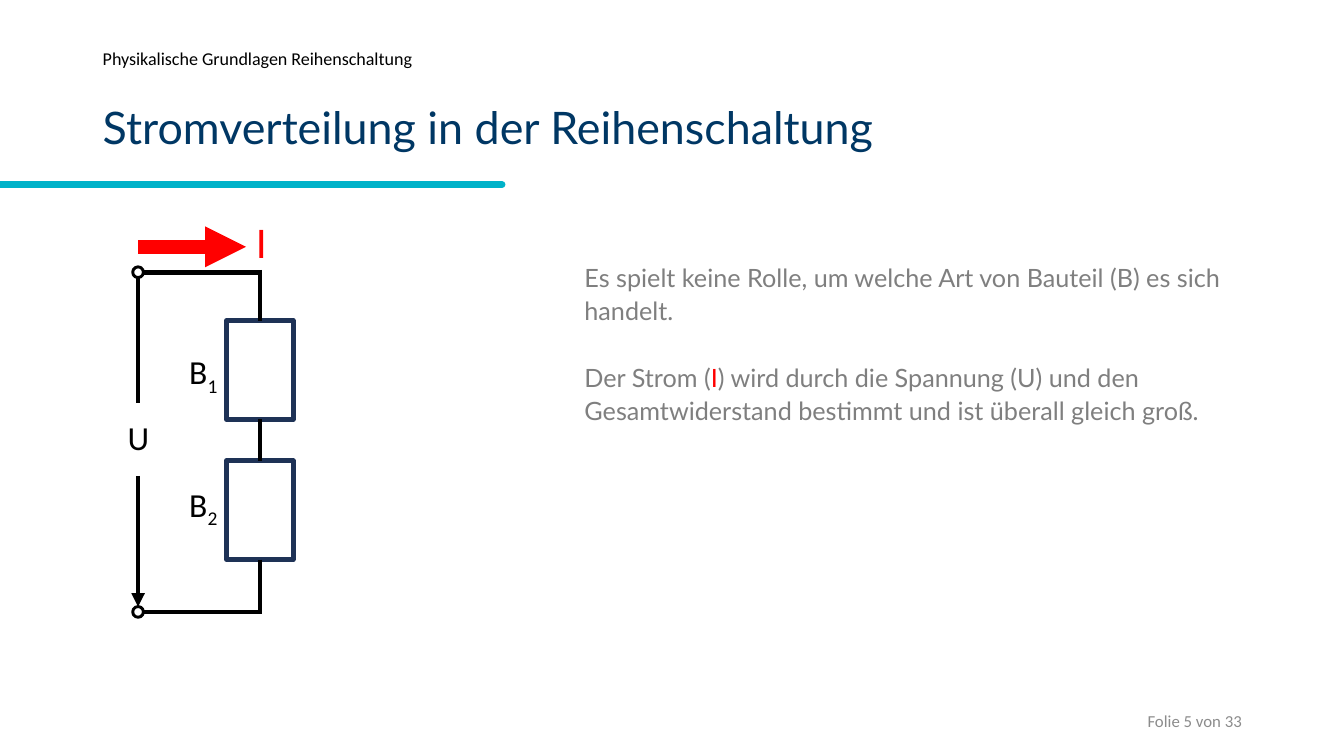
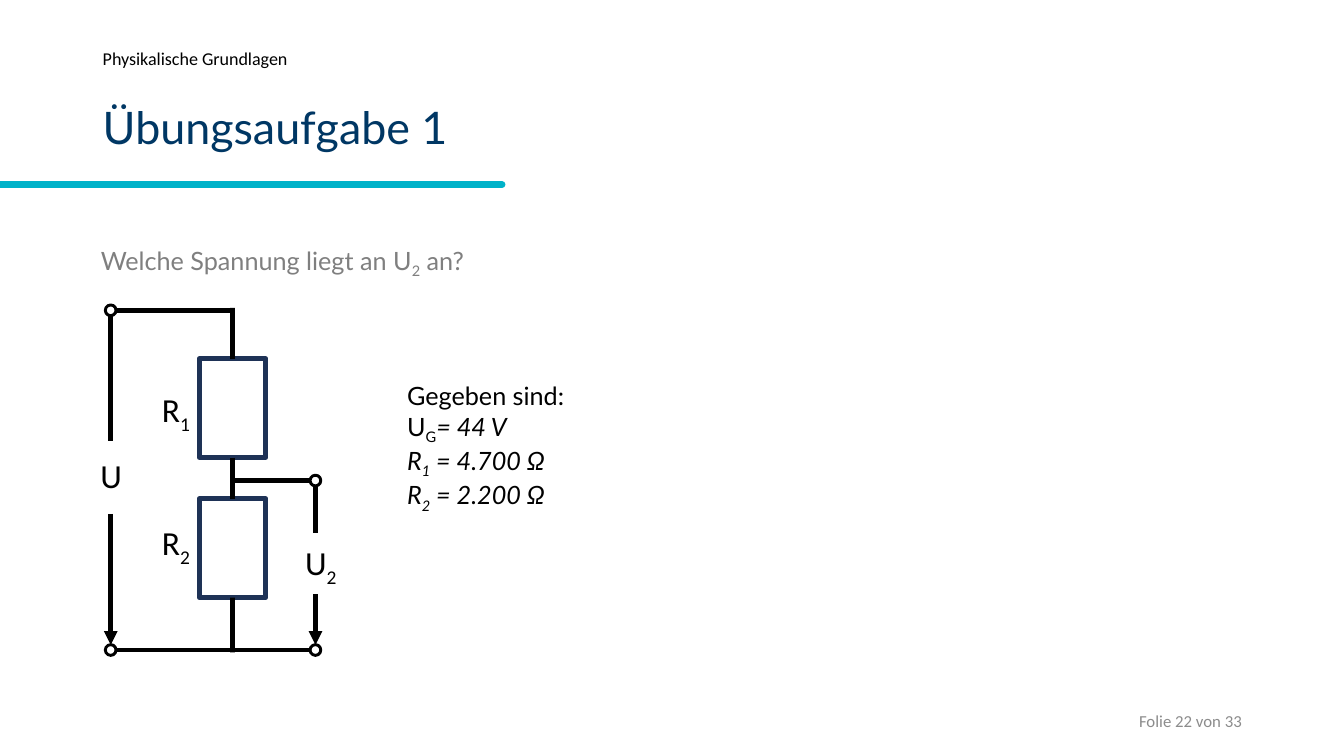
from lxml import etree
from pptx import Presentation
from pptx.dml.color import RGBColor
from pptx.enum.shapes import MSO_CONNECTOR, MSO_SHAPE
from pptx.enum.text import MSO_ANCHOR, PP_ALIGN
from pptx.oxml.ns import qn
from pptx.util import Cm, Pt

STRAIGHT = MSO_CONNECTOR.STRAIGHT
RECTANGLE, OVAL = MSO_SHAPE.RECTANGLE, MSO_SHAPE.OVAL
TOP, MIDDLE = MSO_ANCHOR.TOP, MSO_ANCHOR.MIDDLE
LEFT, RIGHT = PP_ALIGN.LEFT, PP_ALIGN.RIGHT
SIDE_TOP, SIDE_BOTTOM = 0, 2

COLORS = {
    "title": "003764",
    "band": "00B2C9",
    "body": "7F7F7F",
    "footer": "8C8C8C",
    "black": "000000",
    "white": "FFFFFF",
    "red": "FF0000",
    "component": "1E3256",
}
HEADING_FONT, LABEL_FONT = "Lato", "Calibri"
SLIDE_COUNT = 33

SLIDES = [
    {
        "topic": "Physikalische Grundlagen Reihenschaltung",
        "title": "Stromverteilung in der Reihenschaltung",
        "number": 5,
        "texts": [
            {
                "box": (14.48, 6.4, 16.59, 6),
                "color": "body",
                "line_spacing": 1.1,
                "space_before": 24,
                "paragraphs": [
                    [("Es spielt keine Rolle, um welche Art von Bauteil (B) es sich handelt.", "")],
                    [
                        ("Der Strom (", ""),
                        ("I", "red"),
                        (") wird durch die Spannung (U) und den Gesamtwiderstand "
                         "bestimmt und ist überall gleich groß.", ""),
                    ],
                ],
            },
        ],
        "circuit": {"origin": (3.48, 6.86), "component": "B", "current": True, "tap": False},
    },
    {
        "topic": "Physikalische Grundlagen",
        "title": "Übungsaufgabe 1",
        "number": 22,
        "texts": [
            {
                "box": (2.29, 6.07, 26.8, 1.3),
                "color": "body",
                "line_spacing": 0.9,
                "paragraphs": [
                    [("Welche Spannung liegt an U", ""), ("2", "sub"), (" an?", "")],
                ],
            },
            {
                "box": (10.01, 9.47, 17.3, 3.33),
                "color": "black",
                "paragraphs": [
                    [("Gegeben sind:", "")],
                    [("U", ""), ("G", "sub"), ("= 44 V", "italic")],
                    [("R", "italic"), ("1", "sub italic"), (" = 4.700 Ω", "italic")],
                    [("R", "italic"), ("2", "sub italic"), (" = 2.200 Ω", "italic")],
                ],
            },
        ],
        "circuit": {"origin": (2.79, 7.82), "component": "R", "current": False, "tap": True},
    },
]

BRANCH_X, TAP_X = 3.07, 5.16
TAP_Y, BOTTOM_Y = 4.29, 8.56
COMPONENT_WIDTH, COMPONENT_HEIGHT = 1.68, 2.49
COMPONENT_TOP, COMPONENT_PITCH = 1.22, 3.53
LABEL_TOP, LABEL_PITCH = 1.86, 3.35
LABEL_WIDTH, LABEL_HEIGHT = 1.7, 1.27
TERMINAL_DIAMETER = 0.27
ARROW_END_Y = 8.43
WIRE_WIDTH = 3.25
CORNER = 0.06


def rgb(name):
    return RGBColor.from_string(COLORS[name])


def add_text(slide, box, paragraphs, size, color, font=HEADING_FONT, align=LEFT,
             anchor=TOP, line_spacing=1.0, space_before=0):
    frame = slide.shapes.add_textbox(*map(Cm, box)).text_frame
    frame.word_wrap = True
    frame.vertical_anchor = anchor
    for index, runs in enumerate(paragraphs):
        paragraph = frame.add_paragraph() if index else frame.paragraphs[0]
        paragraph.alignment = align
        paragraph.line_spacing = line_spacing
        paragraph.space_before = Pt(space_before if index else 0)
        for text, style in runs:
            run = paragraph.add_run()
            run.text = text
            run.font.name = font
            run.font.size = Pt(size)
            run.font.color.rgb = rgb("red" if "red" in style else color)
            if "italic" in style:
                run.font.italic = True
            if "sub" in style:
                run.font._element.set("baseline", "-25000")


def add_line(slide, start, end, color="black", width=WIRE_WIDTH, arrow=False, round_cap=False):
    line = slide.shapes.add_connector(STRAIGHT, *map(Cm, (*start, *end)))
    line.line.color.rgb = rgb(color)
    line.line.width = Pt(width)
    properties = line._element.spPr
    outline = properties.find(qn("a:ln"))
    if round_cap:
        outline.set("cap", "rnd")
    if arrow:
        etree.SubElement(outline, qn("a:tailEnd"), type="triangle")
    etree.SubElement(properties, qn("a:effectLst"))
    return line


def add_outlined(slide, kind, box, color, width, fill=None):
    shape = slide.shapes.add_shape(kind, *map(Cm, box))
    shape.shadow.inherit = False
    if fill:
        shape.fill.solid()
        shape.fill.fore_color.rgb = rgb(fill)
    else:
        shape.fill.background()
    shape.line.color.rgb = rgb(color)
    shape.line.width = Pt(width)
    return shape


def add_circuit(slide, origin, component, current, tap):
    def at(x, y):
        return origin[0] + x, origin[1] + y

    def wire(start, end, **options):
        return add_line(slide, at(*start), at(*end), **options)

    def label(x, y, letter, index=""):
        runs = [(letter, "")] + ([(index, "sub")] if index else [])
        add_text(slide, (*at(x, y), LABEL_WIDTH, LABEL_HEIGHT), [runs], 24, "black", LABEL_FONT)

    def voltage(x, top, gap_top, gap_bottom):
        wire((x, top), (x, gap_top))
        wire((x, gap_bottom), (x, ARROW_END_Y), arrow=True)

    components = []
    for index in range(2):
        position = at(BRANCH_X - COMPONENT_WIDTH / 2, COMPONENT_TOP + index * COMPONENT_PITCH)
        components.append(add_outlined(
            slide, RECTANGLE, (*position, COMPONENT_WIDTH, COMPONENT_HEIGHT), "component", 3.5))
        label(1.04, LABEL_TOP + index * LABEL_PITCH, component, str(index + 1))

    upper, lower = components
    branch_top, branch_bottom = (BRANCH_X, -CORNER), (BRANCH_X, BOTTOM_Y + CORNER)
    wire(branch_top, branch_top).end_connect(upper, SIDE_TOP)
    middle = wire(branch_top, branch_bottom)
    middle.begin_connect(upper, SIDE_BOTTOM)
    middle.end_connect(lower, SIDE_TOP)
    wire(branch_bottom, branch_bottom).begin_connect(lower, SIDE_BOTTOM)

    terminals = [(0, 0), (0, BOTTOM_Y)]
    for x, y in terminals:
        wire((BRANCH_X, y), (x, y))
    voltage(0, 0, 3.3, 5.13)
    label(-0.51, 3.51, "U")

    if tap:
        tap_terminals = [(TAP_X, TAP_Y), (TAP_X, BOTTOM_Y)]
        for x, y in tap_terminals:
            wire((BRANCH_X, y), (x, y))
        voltage(TAP_X, TAP_Y, 5.61, 7.16)
        label(4.65, 5.72, "U", "2")
        terminals += tap_terminals

    for x, y in terminals:
        radius = TERMINAL_DIAMETER / 2
        add_outlined(slide, OVAL, (*at(x - radius, y - radius), TERMINAL_DIAMETER, TERMINAL_DIAMETER),
                     "black", 2.1, "white")

    if current:
        wire((0, -0.64), (2.72, -0.64), color="red", width=9.75, arrow=True)
        add_text(slide, (*at(2.72, -1.47), 1.52, 1.45), [[("I", "")]], 28, "red")


def add_frame(slide, topic, title, number):
    add_line(slide, (-0.05, 4.65), (12.65, 4.65), "band", 5, round_cap=True)
    add_text(slide, (2.34, 2.03, 29.21, 2.49), [[(title, "")]], 32, "title",
             anchor=MIDDLE, line_spacing=0.9)
    add_text(slide, (2.34, 1.17, 26.77, 0.71), [[(topic, "")]], 12.9, "black", LABEL_FONT,
             line_spacing=0.8)
    add_text(slide, (23.93, 17.65, 7.62, 1.02), [[(f"Folie {number} von {SLIDE_COUNT}", "")]],
             12, "footer", LABEL_FONT, align=RIGHT, anchor=MIDDLE)


def main():
    presentation = Presentation()
    presentation.slide_width, presentation.slide_height = Cm(33.87), Cm(19.05)
    blank = presentation.slide_layouts[6]
    for content in SLIDES:
        slide = presentation.slides.add_slide(blank)
        add_frame(slide, content["topic"], content["title"], content["number"])
        for text in content["texts"]:
            add_text(slide, size=18, **text)
        add_circuit(slide, **content["circuit"])
    presentation.save("out.pptx")


if __name__ == "__main__":
    main()
